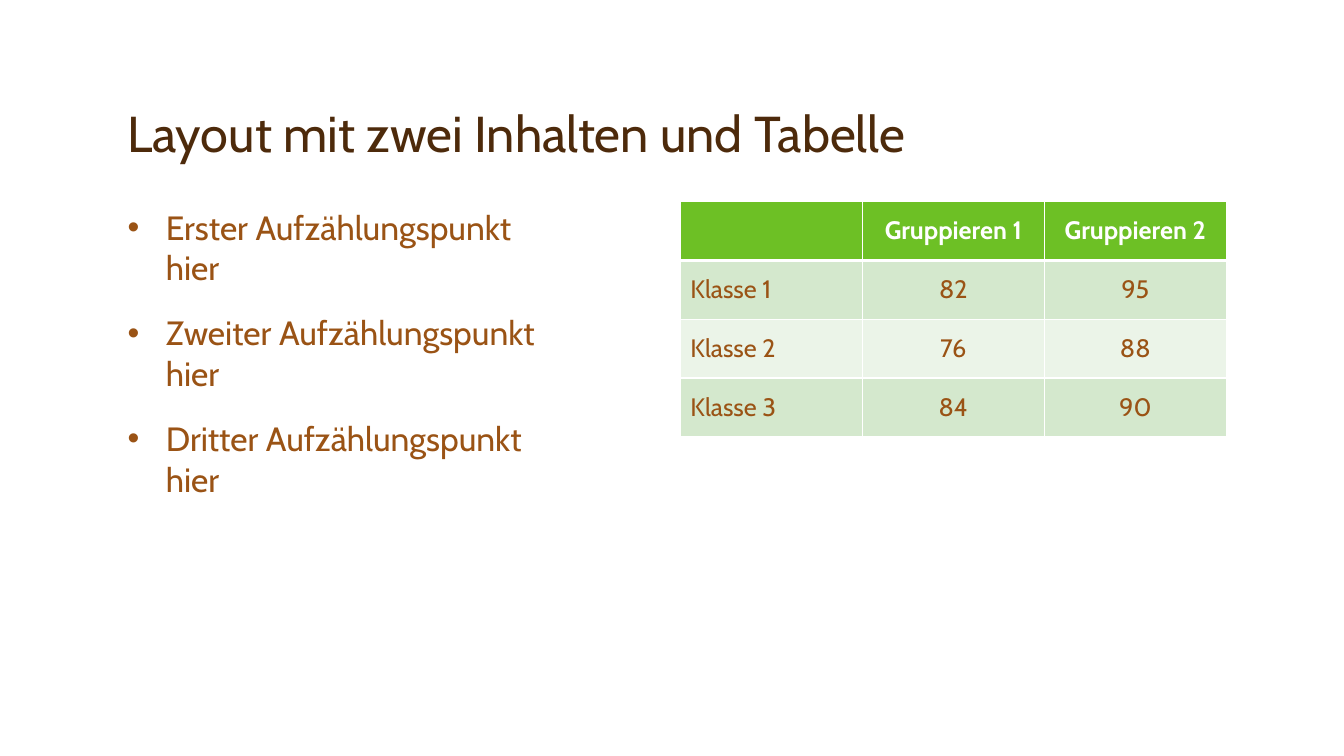
from lxml import etree
from pptx import Presentation
from pptx import util as u
from pptx.dml import color
from pptx.enum import text
from pptx.oxml import ns

THEME = {
    "font": "Cabin",
    "title": "4D2A0B",
    "body": "9A5315",
    "white": "FFFFFF",
    "header": "6DC025",
    "bands": ["D4E8CD", "EBF4E8"],
    "title_size": 36,
    "body_size": 24,
    "table_size": 18,
}


def style(paragraph, size, colour, bold=False):
    font = paragraph.font
    for target in [font] + [run.font for run in paragraph.runs]:
        target.name = THEME["font"]
        target.size = u.Pt(size)
        target.bold = bold
        target.color.rgb = color.RGBColor.from_string(colour)


def add_colour(parent, colour):
    fill = etree.SubElement(parent, ns.qn("a:solidFill"))
    etree.SubElement(fill, ns.qn("a:srgbClr"), val=colour)


presentation = Presentation()
presentation.slide_width = u.Inches(13.33)
presentation.slide_height = u.Inches(7.5)
slide = presentation.slides.add_slide(presentation.slide_layouts[6])

# Grid: 160 columns by 90 rows
column = presentation.slide_width / 160
row = presentation.slide_height / 90
left, content_top = int(14 * column), int(24 * row)

# Title
title = slide.shapes.add_textbox(left, int(4 * row), int(132 * column), int(16 * row))
title.text_frame.word_wrap = True
title.text_frame.vertical_anchor = text.MSO_ANCHOR.BOTTOM
title.text_frame.text = "Layout mit zwei Inhalten und Tabelle"
title.text_frame.paragraphs[0].line_spacing = 0.9
style(title.text_frame.paragraphs[0], THEME["title_size"], THEME["title"])

# Bullet list
points = ["Erster", "Zweiter", "Dritter"]
body = slide.shapes.add_textbox(left, content_top, int(55 * column), int(55 * row))
body.text_frame.word_wrap = True
body.text_frame.text = "\n".join(f"{point} Aufzählungspunkt hier" for point in points)
indent = u.Inches(0.38)
for index, paragraph in enumerate(body.text_frame.paragraphs):
    paragraph.space_before = u.Pt(18 if index else 0)
    properties = paragraph._p.get_or_add_pPr()
    properties.set("marL", str(indent))
    properties.set("indent", str(-indent))
    add_colour(etree.SubElement(properties, ns.qn("a:buClr")), THEME["body"])
    bullet_colour = properties.find(ns.qn("a:buClr"))
    bullet_fill = bullet_colour[0]
    bullet_colour.replace(bullet_fill, bullet_fill[0])
    etree.SubElement(properties, ns.qn("a:buFont"), typeface="Arial")
    etree.SubElement(properties, ns.qn("a:buChar"), char="•")
    style(paragraph, THEME["body_size"], THEME["body"])

# Table
values = [
    ["", "Gruppieren 1", "Gruppieren 2"],
    ["Klasse 1", "82", "95"],
    ["Klasse 2", "76", "88"],
    ["Klasse 3", "84", "90"],
]
table = slide.shapes.add_table(
    len(values), len(values[0]),
    int(81 * column), content_top, int(65 * column), int(7 * row) * len(values),
).table
table.horz_banding = False

for row_index, row_values in enumerate(values):
    is_header = row_index == 0
    fill = THEME["header"] if is_header else THEME["bands"][(row_index - 1) % 2]
    ink = THEME["white"] if is_header else THEME["body"]
    for column_index, value in enumerate(row_values):
        cell = table.cell(row_index, column_index)
        cell.text = value
        cell.vertical_anchor = text.MSO_ANCHOR.MIDDLE
        paragraph = cell.text_frame.paragraphs[0]
        paragraph.alignment = text.PP_ALIGN.CENTER if column_index else text.PP_ALIGN.LEFT
        style(paragraph, THEME["table_size"], ink, is_header)

        # White borders, thicker under the header
        widths = {"L": 1, "R": 1, "T": 3 if row_index == 1 else 1, "B": 3 if is_header else 1}
        for side, width in widths.items():
            line = etree.SubElement(
                cell._tc.get_or_add_tcPr(), ns.qn(f"a:ln{side}"), w=str(u.Pt(width))
            )
            add_colour(line, THEME["white"])
        cell.fill.solid()
        cell.fill.fore_color.rgb = color.RGBColor.from_string(fill)

presentation.save("out.pptx")
